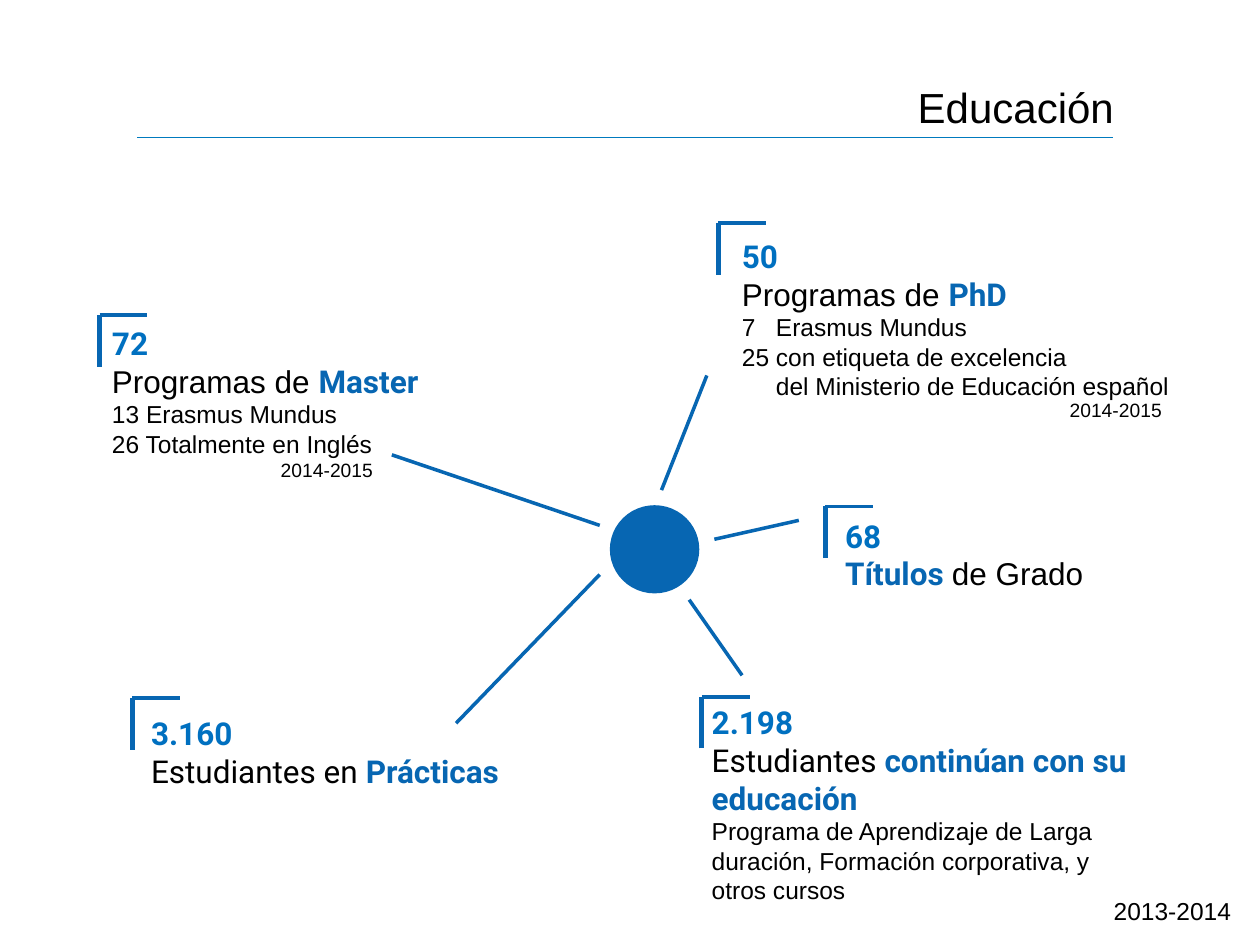
from dataclasses import dataclass

from lxml import etree
from pptx import Presentation
from pptx import util as u
from pptx.dml.color import RGBColor
from pptx.enum import shapes, text
from pptx.oxml.ns import qn


@dataclass(frozen=True)
class TextStyle:
    font: str
    color: str
    bold: bool = False


class Theme:
    blue = "0766B2"
    rule = "007ABE"
    title_size, head_size, detail_size, note_size = 24, 18, 14, 11
    thin, medium, thick = 0.75, 2, 3
    plain = TextStyle("Arial", "000000")
    roboto = TextStyle("Roboto", "000000")
    number = TextStyle("Roboto", "0070C0", True)
    strong = TextStyle("Roboto", blue, True)


BRACKET_WIDTH, BRACKET_HEIGHT = 0.38, 0.41
HANG = 0.27


def apply_style(font, style):
    font.name = style.font
    font.bold = style.bold
    font.color.rgb = RGBColor.from_string(style.color)


class SlideBuilder:
    def __init__(self, presentation, theme):
        self.theme = theme
        self.slide = presentation.slides.add_slide(presentation.slide_layouts[5])

    def title(self, wording, left, top, width, height):
        shape = self.slide.shapes.title
        shape.left, shape.top = u.Inches(left), u.Inches(top)
        shape.width, shape.height = u.Inches(width), u.Inches(height)
        frame = shape.text_frame
        frame.vertical_anchor = text.MSO_ANCHOR.TOP
        paragraph = frame.paragraphs[0]
        paragraph.alignment = text.PP_ALIGN.RIGHT
        self.fill_paragraph(paragraph, self.theme.title_size, [(wording, self.theme.plain)])

    def line(self, start, end, color, weight, parent=None):
        connector = (parent or self.slide).shapes.add_connector(
            shapes.MSO_CONNECTOR.STRAIGHT, *map(u.Inches, (*start, *end)))
        connector.line.color.rgb = RGBColor.from_string(color)
        connector.line.width = u.Pt(weight)
        etree.SubElement(connector._element.spPr, qn("a:effectLst"))

    def bracket(self, x, y):
        """Draw the corner mark whose corner is at x, y."""
        group = self.slide.shapes.add_group_shape()
        theme = self.theme
        self.line((x, y), (x + BRACKET_WIDTH, y), theme.blue, theme.medium, group)
        self.line((x, y + BRACKET_HEIGHT), (x, y), theme.blue, theme.thick, group)

    def hub(self, left, top, width, height):
        shape = self.slide.shapes.add_shape(
            shapes.MSO_SHAPE.OVAL, *map(u.Inches, (left, top, width, height)))
        shape.shadow.inherit = False
        shape.fill.solid()
        shape.fill.fore_color.rgb = RGBColor.from_string(self.theme.blue)
        shape.line.fill.background()

    def fill_paragraph(self, paragraph, size, runs):
        """Write (wording, style) runs; a tab in the wording makes a hanging indent."""
        if "\t" in runs[0][0]:
            properties = paragraph._p.get_or_add_pPr()
            properties.set("marL", str(u.Inches(HANG)))
            properties.set("indent", str(-u.Inches(HANG)))
            tabs = etree.SubElement(properties, qn("a:tabLst"))
            etree.SubElement(tabs, qn("a:tab"), pos=str(u.Inches(HANG)), algn="l")
        paragraph.font.size = u.Pt(size)
        for wording, style in runs:
            for index, part in enumerate(wording.split("\n")):
                if index:
                    paragraph.add_line_break()
                run = paragraph.add_run()
                run.text = part
                if len(runs) > 1:
                    apply_style(run.font, style)
        if len(runs) == 1:
            apply_style(paragraph.font, runs[0][1])

    def text_box(self, box, paragraphs):
        frame = self.slide.shapes.add_textbox(*map(u.Inches, box)).text_frame
        frame.word_wrap = True
        for index, (size, runs) in enumerate(paragraphs):
            paragraph = frame.add_paragraph() if index else frame.paragraphs[0]
            self.fill_paragraph(paragraph, size, runs)

    def callout(self, corner, box, number, heading, details=()):
        theme = self.theme
        self.bracket(*corner)
        self.text_box(box, [
            (theme.head_size, [(number, theme.number)]),
            (theme.head_size, heading),
            *((theme.detail_size, [(detail, theme.plain)]) for detail in details),
        ])

    def year(self, wording, box, size):
        self.text_box(box, [(size, [(wording, self.theme.plain)])])


def main():
    presentation = Presentation()
    presentation.slide_width, presentation.slide_height = u.Inches(10), u.Inches(7.5)
    theme = Theme()
    builder = SlideBuilder(presentation, theme)

    builder.title("Educación", 3.54, 0.6, 5.4, 0.49)
    builder.line((1.09, 1.09), (8.83, 1.09), theme.rule, theme.thin)

    builder.hub(4.84, 4.01, 0.71, 0.7)
    spokes = [
        ((3.62, 5.74), (4.76, 4.56)),
        ((3.11, 3.61), (4.76, 4.17)),
        ((5.25, 3.89), (5.61, 2.98)),
        ((5.67, 4.28), (6.34, 4.13)),
        ((5.89, 5.36), (5.47, 4.76)),
    ]
    for start, end in spokes:
        builder.line(start, end, theme.blue, theme.medium)

    builder.callout(
        (0.79, 2.5), (0.79, 2.52, 2.99, 1.18), "72",
        [("Programas de ", theme.plain), ("Master", theme.strong)],
        ["13 Erasmus Mundus", "26 Totalmente en Inglés"])
    builder.callout(
        (5.7, 1.77), (5.79, 1.83, 4, 2.02), "50",
        [("Programas de ", theme.plain), ("PhD", theme.strong)],
        ["7\tErasmus Mundus",
         "25\tcon etiqueta de excelencia\ndel Ministerio de Educación español"])
    builder.callout(
        (6.55, 4.02), (6.61, 4.05, 3.13, 0.71), "68",
        [("Títulos ", theme.strong), ("de Grado", theme.plain)])
    builder.callout(
        (5.57, 5.53), (5.55, 5.53, 3.62, 1.72), "2.198",
        [("Estudiantes ", theme.roboto), ("continúan con su educación", theme.strong)],
        ["Programa de Aprendizaje de Larga duración, Formación corporativa, y otros cursos"])
    builder.callout(
        (1.05, 5.54), (1.1, 5.62, 3.09, 0.71), "3.160",
        [("Estudiantes en ", theme.roboto), ("Prácticas", theme.strong)])

    builder.year("2013-2014", (8.74, 7.06, 1.22, 0.4), theme.detail_size)
    builder.year("2014-2015", (2.13, 3.59, 0.94, 0.2), theme.note_size)
    builder.year("2014-2015", (8.39, 3.11, 1.22, 0.4), theme.note_size)

    presentation.save("out.pptx")


if __name__ == "__main__":
    main()
